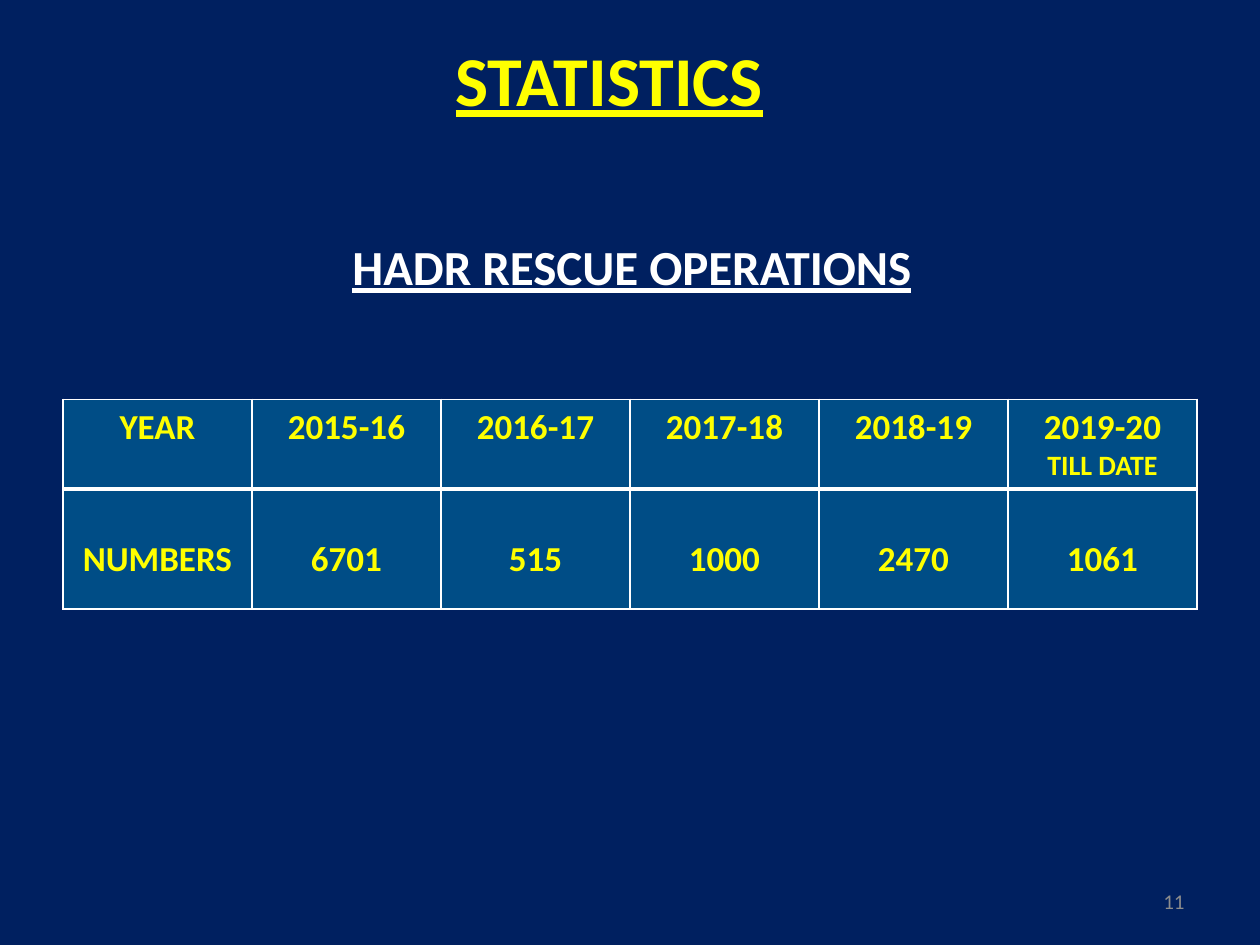
from lxml import etree
from pptx import Presentation
from pptx.dml.color import RGBColor
from pptx.enum.text import MSO_ANCHOR, PP_ALIGN
from pptx.oxml.ns import qn
from pptx.util import Inches, Pt

CENTER, RIGHT = PP_ALIGN.CENTER, PP_ALIGN.RIGHT
TOP, MIDDLE = MSO_ANCHOR.TOP, MSO_ANCHOR.MIDDLE
TITLE_ONLY = 5

NAVY, BLUE, YELLOW, WHITE, GRAY = "002060", "004D86", "FFFF00", "FFFFFF", "8C8C8C"

YEARS = ["YEAR", "2015-16", "2016-17", "2017-18", "2018-19", "2019-20\nTILL DATE"]
NUMBERS = ["NUMBERS", "6701", "515", "1000", "2470", "1061"]
ROW_HEIGHTS = [0.7, 0.95]
COLUMN_WIDTH = 1.5
NUMBERS_TOP_MARGIN = 0.39


def rgb(color):
    return RGBColor.from_string(color)


def add_run(paragraph, text, size, color, bold=True, underline=False, align=CENTER):
    paragraph.alignment = align
    run = paragraph.add_run()
    run.text = text
    font = run.font
    font.name, font.size, font.bold = "Calibri", Pt(size), bold
    font.underline = underline
    font.color.rgb = rgb(color)


def add_title(slide, text):
    title = slide.shapes.title
    title.left, title.top = Inches(1), Inches(0)
    title.width, title.height = Inches(7.67), Inches(1.25)
    title.text_frame.vertical_anchor = MIDDLE
    add_run(title.text_frame.paragraphs[0], text, 40, YELLOW, underline=True)


def add_label(slide, box, text, size, color, anchor=TOP, wrap=True, **style):
    frame = slide.shapes.add_textbox(*map(Inches, box)).text_frame
    frame.word_wrap = wrap
    frame.vertical_anchor = anchor
    add_run(frame.paragraphs[0], text, size, color, **style)


def set_borders(cell, widths):
    """Draw white left, right, top and bottom borders, widths in points."""
    properties = cell._tc.get_or_add_tcPr()
    for index, (side, width) in enumerate(zip("LRTB", widths)):
        line = etree.Element(qn(f"a:ln{side}"), w=str(Pt(width)))
        fill = etree.SubElement(line, qn("a:solidFill"))
        etree.SubElement(fill, qn("a:srgbClr"), val=WHITE)
        properties.insert(index, line)


def fill_cell(cell, text, border_widths):
    cell.fill.solid()
    cell.fill.fore_color.rgb = rgb(BLUE)
    set_borders(cell, border_widths)
    frame = cell.text_frame
    heading, *notes = text.split("\n")
    add_run(frame.paragraphs[0], heading, 20, YELLOW)
    for note in notes:
        add_run(frame.add_paragraph(), note, 16, YELLOW)


def add_statistics_table(slide):
    table = slide.shapes.add_table(
        2, len(YEARS), Inches(0.5), Inches(3.17),
        Inches(COLUMN_WIDTH * len(YEARS)), Inches(sum(ROW_HEIGHTS))).table
    for row, height in zip(table.rows, ROW_HEIGHTS):
        row.height = Inches(height)
    for column, (year, number) in enumerate(zip(YEARS, NUMBERS)):
        table.columns[column].width = Inches(COLUMN_WIDTH)
        fill_cell(table.cell(0, column), year, (1, 1, 1, 3))
        number_cell = table.cell(1, column)
        fill_cell(number_cell, number, (1, 1, 3, 1))
        number_cell.margin_top = Inches(NUMBERS_TOP_MARGIN)


def main():
    presentation = Presentation()
    presentation.slide_width, presentation.slide_height = Inches(10), Inches(7.5)
    slide = presentation.slides.add_slide(presentation.slide_layouts[TITLE_ONLY])
    slide.background.fill.solid()
    slide.background.fill.fore_color.rgb = rgb(NAVY)

    add_title(slide, "STATISTICS")
    add_statistics_table(slide)
    add_label(slide, (2.67, 1.83, 4.69, 0.57), "HADR RESCUE OPERATIONS", 28, WHITE,
              wrap=False, underline=True)
    add_label(slide, (7.17, 6.95, 2.33, 0.4), "11", 12, GRAY,
              anchor=MIDDLE, bold=False, align=RIGHT)
    presentation.save("out.pptx")


if __name__ == "__main__":
    main()
